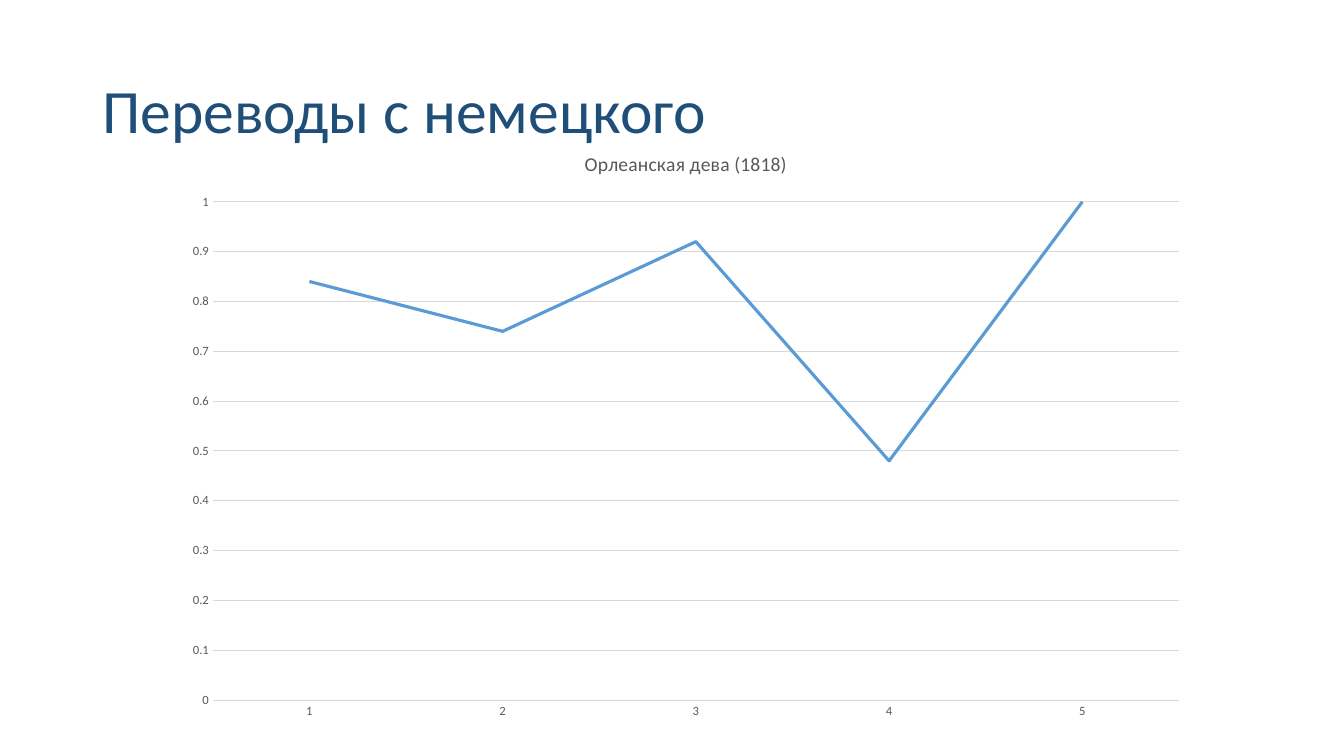
"""Build a slide with a line chart of translations from German."""
from typing import NamedTuple

from pptx import Presentation
from pptx.chart.axis import _BaseAxis
from pptx.chart.chart import Chart
from pptx.chart.data import CategoryChartData
from pptx.dml.color import RGBColor
from pptx.enum.chart import XL_CHART_TYPE, XL_MARKER_STYLE, XL_TICK_MARK
from pptx.enum.text import MSO_ANCHOR
from pptx.slide import Slide
from pptx.text.text import Font
from pptx.util import Pt

FONT_NAME = "Calibri"
NAVY = RGBColor(0x1F, 0x4E, 0x79)
BLUE = RGBColor(0x5B, 0x9B, 0xD5)
GRAY = RGBColor(0x59, 0x59, 0x59)
LIGHT_GRAY = RGBColor(0xD9, 0xD9, 0xD9)
BLACK = RGBColor(0, 0, 0)

HEADING = "Переводы с немецкого"
CHART_TITLE = "Орлеанская дева (1818)"
CATEGORIES = ("1", "2", "3", "4", "5")
VALUES = (0.84, 0.74, 0.92, 0.48, 1)


class Box(NamedTuple):
    left: float
    top: float
    width: float
    height: float

    def lengths(self) -> tuple[Pt, ...]:
        return tuple(Pt(value) for value in self)


HEADING_BOX = Box(66, 28.8, 828, 104.4)
CHART_BOX = Box(123.1, 92.2, 733.7, 429.8)


def style_font(font: Font, size: float, color: RGBColor) -> None:
    font.name = FONT_NAME
    font.size = Pt(size)
    font.bold = False
    font.color.rgb = color


def add_heading(slide: Slide) -> None:
    text_frame = slide.shapes.add_textbox(*HEADING_BOX.lengths()).text_frame
    text_frame.word_wrap = True
    text_frame.vertical_anchor = MSO_ANCHOR.MIDDLE
    paragraph = text_frame.paragraphs[0]
    paragraph.text = HEADING
    paragraph.line_spacing = 0.9
    style_font(paragraph.font, 44, NAVY)


def style_axis(axis: _BaseAxis) -> None:
    axis.major_tick_mark = XL_TICK_MARK.NONE
    axis.minor_tick_mark = XL_TICK_MARK.NONE
    style_font(axis.tick_labels.font, 9, GRAY)


def style_axes(chart: Chart) -> None:
    category_axis, value_axis = chart.category_axis, chart.value_axis
    for axis in (category_axis, value_axis):
        style_axis(axis)
    value_axis.minimum_scale = 0
    value_axis.maximum_scale = 1
    value_axis.major_unit = 0.1
    value_axis.format.line.fill.background()
    for line in (category_axis.format.line, value_axis.major_gridlines.format.line):
        line.color.rgb = LIGHT_GRAY
        line.width = Pt(0.75)


def add_line_chart(slide: Slide) -> None:
    data = CategoryChartData()
    data.categories = CATEGORIES
    data.add_series(CHART_TITLE, VALUES)
    chart = slide.shapes.add_chart(
        XL_CHART_TYPE.LINE, *CHART_BOX.lengths(), data
    ).chart
    style_font(chart.font, 10, BLACK)
    chart.has_legend = False
    chart.has_title = True
    chart.chart_title.include_in_layout = False
    paragraph = chart.chart_title.text_frame.paragraphs[0]
    paragraph.text = CHART_TITLE
    style_font(paragraph.font, 14, GRAY)
    style_axes(chart)

    plot = chart.plots[0]
    plot.vary_by_categories = False
    series = plot.series[0]
    series.smooth = False
    series.marker.style = XL_MARKER_STYLE.NONE
    series.format.line.color.rgb = BLUE
    series.format.line.width = Pt(2.25)


def main() -> None:
    presentation = Presentation()
    presentation.slide_width = Pt(960)
    presentation.slide_height = Pt(540)
    slide = presentation.slides.add_slide(presentation.slide_layouts[6])
    add_heading(slide)
    add_line_chart(slide)
    presentation.save("out.pptx")


if __name__ == "__main__":
    main()
